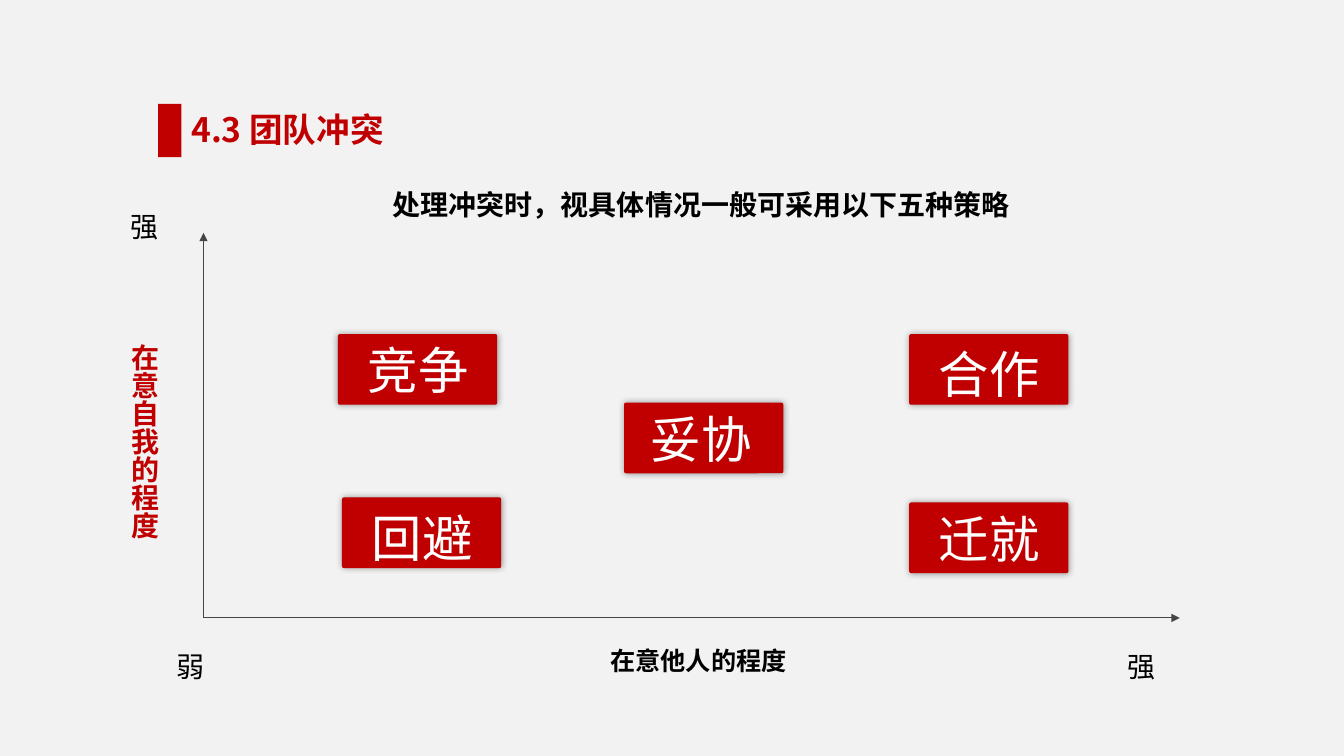
from dataclasses import dataclass

from lxml import etree
from pptx import Presentation
from pptx.dml.color import RGBColor
from pptx.enum.shapes import MSO_CONNECTOR, MSO_SHAPE
from pptx.enum.text import MSO_AUTO_SIZE, PP_ALIGN
from pptx.oxml.ns import qn
from pptx.util import Inches, Length, Pt

RECTANGLE = MSO_SHAPE.RECTANGLE
ROUNDED = MSO_SHAPE.ROUNDED_RECTANGLE
STRAIGHT = MSO_CONNECTOR.STRAIGHT
FIT_TEXT = MSO_AUTO_SIZE.SHAPE_TO_FIT_TEXT
LEFT, CENTER = PP_ALIGN.LEFT, PP_ALIGN.CENTER

# Grid of square cells, ten to the inch
COLUMNS, ROWS = 133.4, 75


@dataclass(frozen=True)
class Theme:
    font: str = "Noto Sans CJK SC"
    background: str = "F2F2F2"
    accent: str = "C00000"
    ink: str = "000000"
    paper: str = "FFFFFF"
    axis: str = "454545"
    title: int = 24
    body: int = 20
    caption: int = 18
    strategy: int = 36
    stroke: float = 0.75
    shadow_blur: int = 5
    shadow_percent: int = 40


@dataclass(frozen=True)
class Area:
    column: float
    row: float
    width: float
    height: float

    def lengths(self) -> list[Length]:
        return [cells(n) for n in (self.column, self.row, self.width, self.height)]


@dataclass(frozen=True)
class Label:
    text: str
    area: Area
    size: int
    color: str
    bold: bool = False
    align: PP_ALIGN = LEFT
    wrap: bool = False
    vertical: bool = False


@dataclass(frozen=True)
class Strategy:
    name: str
    column: float
    row: float
    label_right: float = 1.9
    label_down: float = 0


THEME = Theme()
TILE_WIDTH, TILE_HEIGHT = 15.7, 6.9
ORIGIN = (20.2, 61.3)
AXIS_ENDS = [(20.2, 23.1), (117.1, 61.3)]

LABELS = [
    Label("处理冲突时，视具体情况一般可采用以下五种策略", Area(25.5, 18.1, 88.2, 4.3),
          THEME.body, THEME.ink, bold=True, align=CENTER, wrap=True),
    Label("弱", Area(16.5, 63.9, 4.8, 4.3), THEME.body, THEME.ink),
    Label("强", Area(110.9, 63.9, 4.8, 4.3), THEME.body, THEME.ink),
    Label("强", Area(12, 20.3, 4.8, 4.3), THEME.body, THEME.ink),
    Label("在意他人的程度", Area(59.6, 63.5, 19.5, 4), THEME.caption, THEME.ink, bold=True),
    Label("在意自我的程度", Area(11.2, 33.1, 5.3, 21.2), THEME.body, THEME.accent,
          bold=True, vertical=True),
    Label("4.3 团队冲突", Area(18, 10.3, 51.2, 5), THEME.title, THEME.accent,
          bold=True, wrap=True),
]

STRATEGIES = [
    Strategy("竞争", 33.6, 33.2),
    Strategy("合作", 90.3, 33.2, label_down=0.3),
    Strategy("回避", 34, 49.4, label_down=0.4),
    Strategy("迁就", 90.3, 49.9),
    Strategy("妥协", 62, 40, label_right=1.6),
]


def cells(count: float) -> Length:
    return Inches(count / 10)


def rgb(color: str) -> RGBColor:
    return RGBColor.from_string(color)


def write(frame, text: str, *, size: int, color: str, bold: bool, align: PP_ALIGN) -> None:
    para = frame.paragraphs[0]
    para.alignment = align
    span = para.add_run()
    span.text = text
    span.font.size = Pt(size)
    span.font.bold = bold
    span.font.color.rgb = rgb(color)
    span.font.name = THEME.font
    properties = span.font._element
    etree.SubElement(properties, qn("a:ea"), typeface=THEME.font)


def add_label(shapes, label: Label) -> None:
    box = shapes.add_textbox(*label.area.lengths())
    frame = box.text_frame
    frame.word_wrap = label.wrap
    frame.auto_size = FIT_TEXT
    if label.vertical:
        frame._txBody.bodyPr.set("vert", "eaVert")
    write(frame, label.text, size=label.size, color=label.color,
          bold=label.bold, align=label.align)


def add_block(shapes, kind: MSO_SHAPE, area: Area):
    block = shapes.add_shape(kind, *area.lengths())
    block.shadow.inherit = False
    block.fill.solid()
    block.fill.fore_color.rgb = rgb(THEME.accent)
    block.line.fill.background()
    return block


def add_glow(block) -> None:
    effects = block._element.spPr.find(qn("a:effectLst"))
    shadow = etree.SubElement(effects, qn("a:outerShdw"), blurRad=str(Pt(THEME.shadow_blur)),
                              dist="0", algn="ctr", rotWithShape="0")
    color = etree.SubElement(shadow, qn("a:srgbClr"), val=THEME.ink)
    etree.SubElement(color, qn("a:alpha"), val=str(THEME.shadow_percent * 1000))


def add_axis(shapes, end: tuple[float, float]) -> None:
    axis = shapes.add_connector(STRAIGHT, *map(cells, ORIGIN + end))
    axis.line.color.rgb = rgb(THEME.axis)
    axis.line.width = Pt(THEME.stroke)
    etree.SubElement(axis.line._get_or_add_ln(), qn("a:tailEnd"), type="triangle")
    etree.SubElement(axis._element.spPr, qn("a:effectLst"))


def add_strategy(shapes, strategy: Strategy) -> None:
    group = shapes.add_group_shape()
    tile = add_block(group.shapes, ROUNDED,
                     Area(strategy.column, strategy.row, TILE_WIDTH, TILE_HEIGHT))
    tile.adjustments[0] = 0.02
    tile.line.color.rgb = rgb(THEME.accent)
    tile.line.width = Pt(THEME.stroke)
    add_glow(tile)
    area = Area(strategy.column + strategy.label_right, strategy.row + strategy.label_down, 12, 7)
    add_label(group.shapes, Label(strategy.name, area, THEME.strategy, THEME.paper, align=CENTER))


def main() -> None:
    deck = Presentation()
    deck.slide_width, deck.slide_height = cells(COLUMNS), cells(ROWS)
    slide = deck.slides.add_slide(deck.slide_layouts[6])
    slide.background.fill.solid()
    slide.background.fill.fore_color.rgb = rgb(THEME.background)

    # Axes and wording
    for end in AXIS_ENDS:
        add_axis(slide.shapes, end)
    for label in LABELS:
        add_label(slide.shapes, label)

    # Strategy tiles
    for strategy in STRATEGIES:
        add_strategy(slide.shapes, strategy)

    # Title marker
    add_block(slide.shapes, RECTANGLE, Area(15.7, 10.3, 2.3, 5.3))

    deck.save("out.pptx")


if __name__ == "__main__":
    main()
